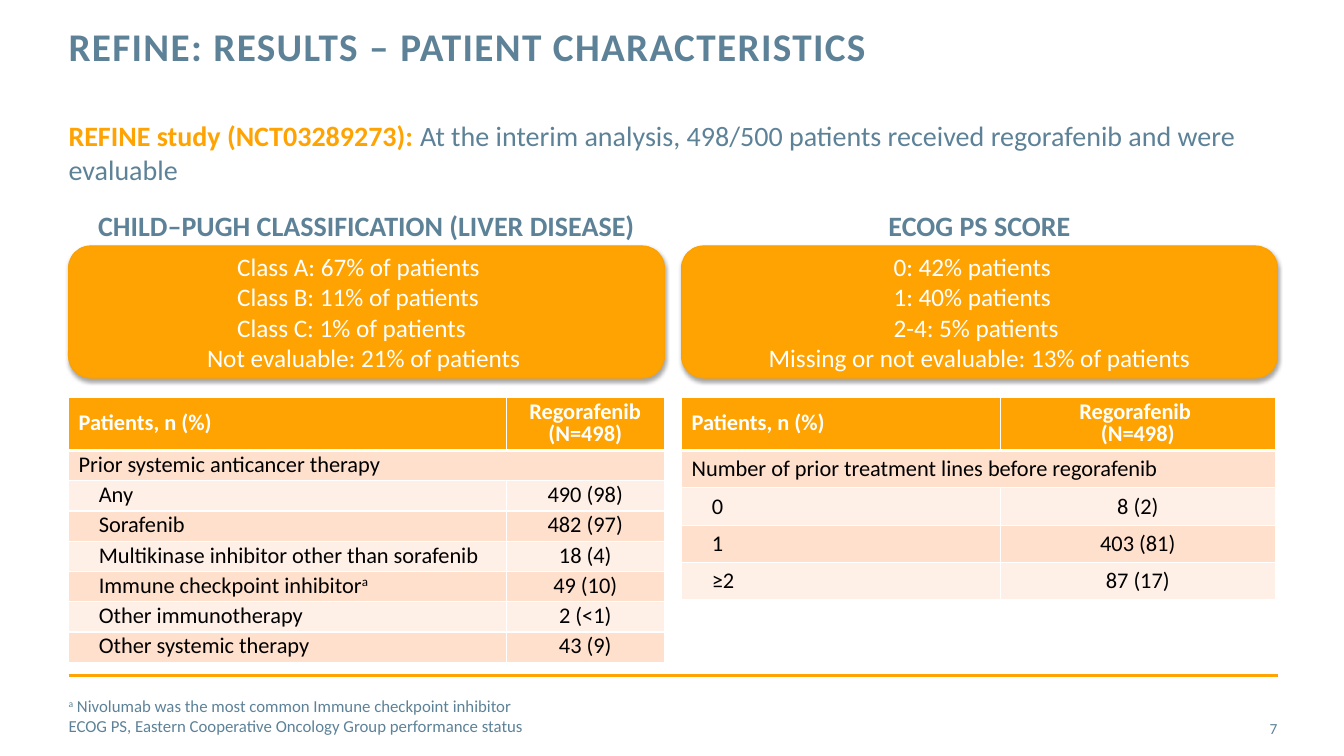
from dataclasses import dataclass

from lxml import etree
from pptx import Presentation
from pptx.dml.color import RGBColor
from pptx.enum.shapes import MSO_CONNECTOR, MSO_SHAPE
from pptx.enum.text import MSO_ANCHOR, PP_ALIGN
from pptx.oxml import parse_xml
from pptx.oxml.ns import nsdecls, qn
from pptx.util import Inches, Pt

LEFT, CENTER, RIGHT = PP_ALIGN.LEFT, PP_ALIGN.CENTER, PP_ALIGN.RIGHT
TOP, MIDDLE = MSO_ANCHOR.TOP, MSO_ANCHOR.MIDDLE
ROUNDED = MSO_SHAPE.ROUNDED_RECTANGLE
STRAIGHT = MSO_CONNECTOR.STRAIGHT

FONT = "Calibri"
COLORS = {
    "slate": "5D8298", "orange": "FEA302", "rule": "FFA402", "edge": "FAA000",
    "white": "FFFFFF", "black": "000000", "dark_band": "FFE0CC", "light_band": "FFF0E7",
}
MARGIN = 0.68
PANEL_W = 5.91


@dataclass
class Segment:
    text: str
    color: str = "slate"
    bold: bool = False
    superscript: bool = False


@dataclass
class TextBlock:
    box: tuple[float, float, float, float]
    size: float
    segments: list[Segment]
    align: PP_ALIGN = LEFT
    anchor: MSO_ANCHOR = TOP
    inset: tuple[float, float] = (0, 0)


@dataclass
class Panel:
    left: float
    heading: str
    indent: float
    scores: list[str]
    columns: list[float]
    body_height: float
    body_inset: float
    body_spacing: float
    rows: list[list[str]]


TEXTS = [
    TextBlock((MARGIN, 1.18, 11.99, 0.85), 20, [
        Segment("REFINE study (NCT03289273): ", "orange", True),
        Segment("At the interim analysis, 498/500 patients received regorafenib and were evaluable"),
    ]),
    TextBlock((11.81, 7.03, 0.86, 0.4), 11, [Segment("7")], RIGHT, MIDDLE),
    TextBlock((MARGIN, 6.9, 8.88, 0.4), 12, [
        Segment("a", superscript=True),
        Segment(" Nivolumab was the most common Immune checkpoint inhibitor\n"
                "ECOG PS, Eastern Cooperative Oncology Group performance status"),
    ], anchor=MIDDLE),
]
TITLE = TextBlock((MARGIN, 0.27, 9.56, 0.88), 28,
                  [Segment("REFINE: RESULTS – PATIENT CHARACTERISTICS", bold=True)])

PANELS = [
    Panel(MARGIN, "CHILD–PUGH CLASSIFICATION (LIVER DISEASE)", 1.51,
          ["Class A: 67% of patients", "Class B: 11% of patients",
           "Class C: 1% of patients", "Not evaluable: 21% of patients "],
          [4.34, 1.57], 0.3, 0.04, 0.8,
          [["Patients, n (%)", "Regorafenib (N=498)"],
           ["Prior systemic anticancer therapy"],
           ["Any", "490 (98)"],
           ["Sorafenib", "482 (97)"],
           ["Multikinase inhibitor other than sorafenib", "18 (4)"],
           ["Immune checkpoint inhibitor^a", "49 (10)"],
           ["Other immunotherapy", "2 (<1)"],
           ["Other systemic therapy", "43 (9)"]]),
    Panel(6.76, "ECOG PS SCORE", 1.94,
          ["0: 42% patients", "1: 40% patients", "2-4: 5% patients",
           "Missing or not evaluable: 13% of patients"],
          [3.16, 2.73], 0.37, 0.05, 1.0,
          [["Patients, n (%)", "Regorafenib \n(N=498)"],
           ["Number of prior treatment lines before regorafenib"],
           ["0", "8 (2)"],
           ["1", "403 (81)"],
           ["≥2", "87 (17)"]]),
]


def rgb(name: str) -> RGBColor:
    return RGBColor.from_string(COLORS[name])


def write(p, segments: list[Segment], size: float, align: PP_ALIGN = LEFT) -> None:
    p.alignment = align
    for segment in segments:
        for i, line in enumerate(segment.text.split("\n")):
            if i:
                p.add_line_break()
            r = p.add_run()
            r.text = line
            r.font.name = FONT
            r.font.size = Pt(size)
            r.font.bold = segment.bold
            r.font.color.rgb = rgb(segment.color)
            if segment.superscript:
                r._r.get_or_add_rPr().set("baseline", "30000")


def add_text(s, block: TextBlock):
    tf = s.shapes.add_textbox(*map(Inches, block.box)).text_frame
    tf.word_wrap = True
    tf.vertical_anchor = block.anchor
    tf.margin_left = tf.margin_right = Inches(block.inset[0])
    tf.margin_top = tf.margin_bottom = Inches(block.inset[1])
    write(tf.paragraphs[0], block.segments, block.size, block.align)
    return tf.paragraphs[0]


def add_title(s) -> None:
    p = add_text(s, TITLE)
    p.line_spacing = Pt(30)
    p.runs[0]._r.get_or_add_rPr().set("spc", "100")


def add_footer_rule(s) -> None:
    rule = s.shapes.add_connector(STRAIGHT, *map(Inches, (MARGIN, 6.7, 12.68, 6.7)))
    rule.line.color.rgb = rgb("rule")
    rule.line.width = Pt(2)
    etree.SubElement(rule._element.spPr, qn("a:effectLst"))


def add_score_card(s, panel: Panel) -> None:
    card = s.shapes.add_shape(ROUNDED, *map(Inches, (panel.left, 2.44, PANEL_W, 1.31)))
    card.fill.solid()
    card.fill.fore_color.rgb = rgb("orange")
    card.line.color.rgb = rgb("edge")
    card.line.width = Pt(0.75)
    card._element.spPr.append(parse_xml(
        f'<a:effectLst {nsdecls("a")}><a:outerShdw blurRad="{Pt(3.1)}" dist="{Pt(1.8)}" '
        f'dir="5400000" rotWithShape="0"><a:srgbClr val="{COLORS["black"]}">'
        '<a:alpha val="35000"/></a:srgbClr></a:outerShdw></a:effectLst>'))
    tf = card.text_frame
    tf.vertical_anchor = MIDDLE
    for i, score in enumerate(panel.scores):
        p = tf.add_paragraph() if i else tf.paragraphs[0]
        last = i == len(panel.scores) - 1
        if not last:
            p._p.get_or_add_pPr().set("marL", str(Inches(panel.indent)))
        write(p, [Segment(score, "white")], 18, CENTER if last else LEFT)


def set_borders(cell, top: float, bottom: float) -> None:
    widths = {"lnL": 1, "lnR": 1, "lnT": top, "lnB": bottom}
    for i, (side, width) in enumerate(widths.items()):
        cell._tc.get_or_add_tcPr().insert(i, parse_xml(
            f'<a:{side} {nsdecls("a")} w="{Pt(width)}"><a:solidFill>'
            f'<a:srgbClr val="{COLORS["white"]}"/></a:solidFill></a:{side}>'))


def add_patient_table(s, panel: Panel) -> None:
    heights = [0.53] + [panel.body_height] * (len(panel.rows) - 1)
    size = (sum(panel.columns), sum(heights))
    table = s.shapes.add_table(len(heights), len(panel.columns),
                               *map(Inches, (panel.left, 3.94, *size))).table
    for column, width in zip(table.columns, panel.columns):
        column.width = Inches(width)
    for i, (values, height) in enumerate(zip(panel.rows, heights)):
        header = i == 0
        table.rows[i].height = Inches(height)
        for j in range(len(panel.columns)):
            cell = table.cell(i, j)
            cell.fill.solid()
            cell.fill.fore_color.rgb = rgb(
                "orange" if header else "dark_band" if i % 2 else "light_band")
            set_borders(cell, 3 if i == 1 else 1, 3 if header else 1)
            cell.vertical_anchor = MIDDLE
            cell.margin_top = cell.margin_bottom = Inches(0.05 if header else panel.body_inset)
        if len(values) == 1:
            table.cell(i, 0).merge(table.cell(i, 1))
        for j, value in enumerate(values):
            p = table.cell(i, j).text_frame.paragraphs[0]
            p.line_spacing = 0.8 if header else panel.body_spacing
            if i > 1 and j == 0:
                p._p.get_or_add_pPr().set("indent", str(Inches(0.2)))
            segments = [Segment(text, "white" if header else "black", header, k > 0)
                        for k, text in enumerate(value.split("^"))]
            write(p, segments, 16, CENTER if j else LEFT)


def main() -> None:
    prs = Presentation()
    prs.slide_width, prs.slide_height = Inches(13.33), Inches(7.5)
    s = prs.slides.add_slide(prs.slide_layouts[6])
    add_footer_rule(s)
    add_title(s)
    for block in TEXTS:
        add_text(s, block)
    for panel in PANELS:
        add_text(s, TextBlock((panel.left, 2.02, PANEL_W, 0.44), 20,
                              [Segment(panel.heading, bold=True)], CENTER, inset=(0.1, 0.05)))
        add_score_card(s, panel)
        add_patient_table(s, panel)
    prs.save("out.pptx")


if __name__ == "__main__":
    main()
